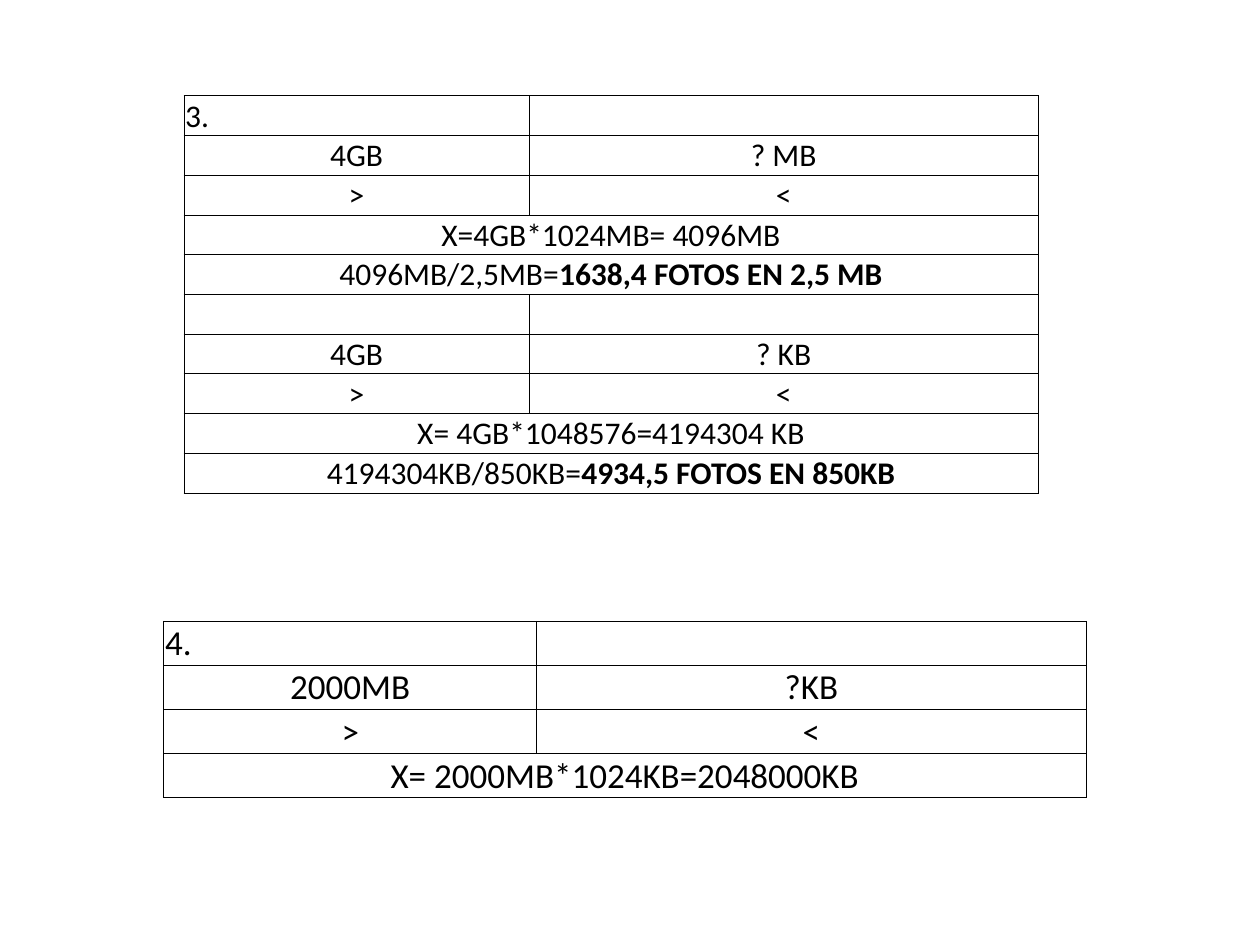
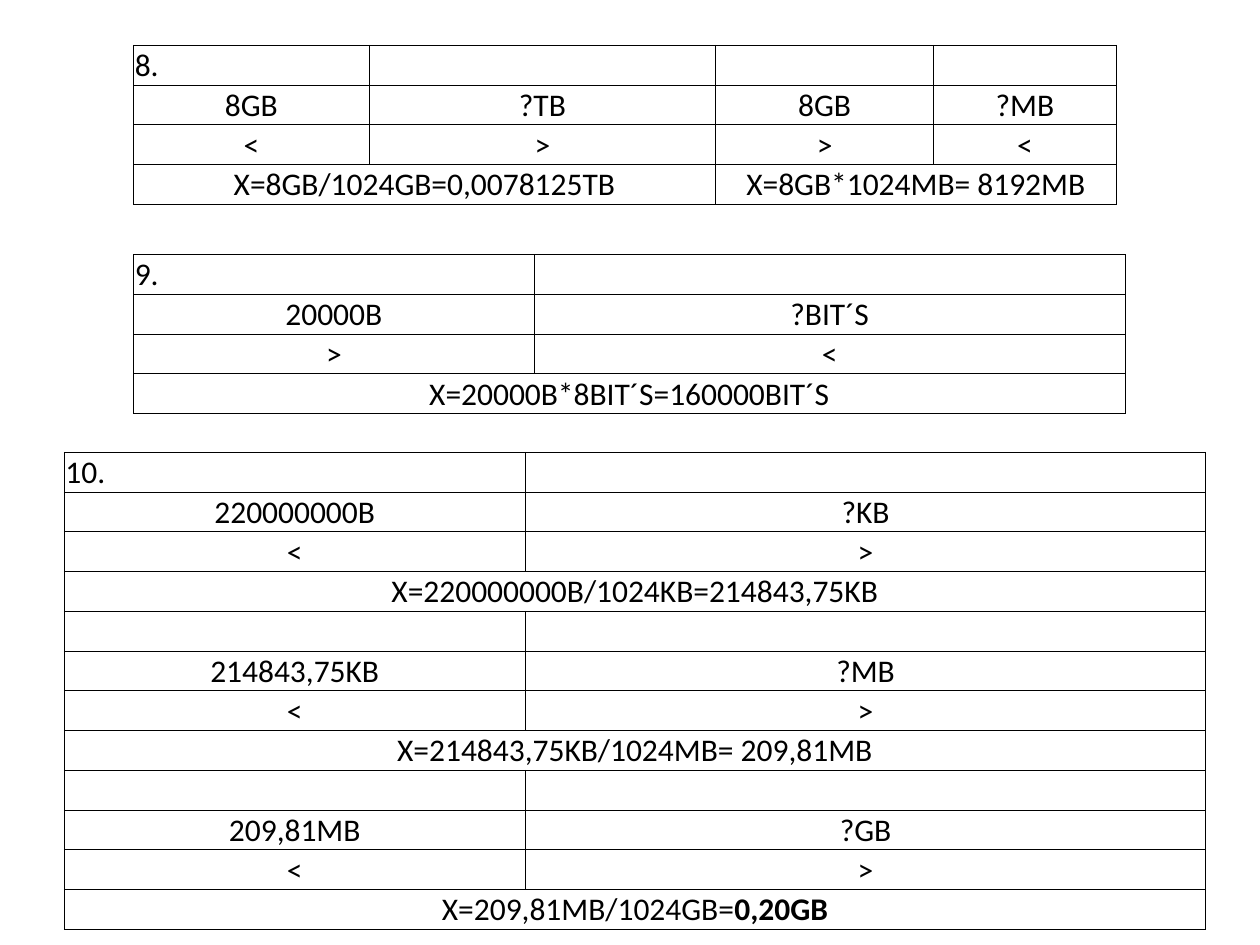
from lxml.etree import SubElement
from pptx import Presentation
from pptx.dml.color import RGBColor
from pptx.enum.text import MSO_ANCHOR, PP_ALIGN
from pptx.oxml.ns import qn
from pptx.util import Inches, Pt

FONT = "Calibri"
INK = "000000"
BORDER_WIDTH = Pt(0.5)
INSET = Inches(0.01)
ROW_HEIGHTS = {18: 0.31, 20: 0.34}

PHOTOS = [
    ["3.", ""],
    ["4GB", "? MB"],
    [">", "<"],
    ["X=4GB*1024MB= 4096MB"],
    [("4096MB/2,5MB=", "1638,4 FOTOS EN 2,5 MB")],
    ["", ""],
    ["4GB", "? KB"],
    [">", "<"],
    ["X= 4GB*1048576=4194304 KB"],
    [("4194304KB/850KB=", "4934,5 FOTOS EN 850KB")],
]
MEGABYTES = [
    ["4.", ""],
    ["2000MB", "?KB"],
    [">", "<"],
    ["X= 2000MB*1024KB=2048000KB"],
]
GIGABYTES = [
    ["8.", "", "", ""],
    ["8GB", "?TB", "8GB", "?MB"],
    ["<", ">", ">", "<"],
    ["X=8GB/1024GB=0,0078125TB", "X=8GB*1024MB= 8192MB"],
]
BITS = [
    ["9.", ""],
    ["20000B", "?BIT´S"],
    [">", "<"],
    ["X=20000B*8BIT´S=160000BIT´S"],
]
BYTES = [
    ["10.", ""],
    ["220000000B", "?KB"],
    ["<", ">"],
    ["X=220000000B/1024KB=214843,75KB"],
    ["", ""],
    ["214843,75KB", "?MB"],
    ["<", ">"],
    ["X=214843,75KB/1024MB= 209,81MB"],
    ["", ""],
    ["209,81MB", "?GB"],
    ["<", ">"],
    [("X=209,81MB/1024GB=", "0,20GB")],
]


def color(hex_code):
    return RGBColor.from_string(hex_code)


def add_borders(cell):
    properties = cell._tc.get_or_add_tcPr()
    for position, side in enumerate(("lnL", "lnR", "lnT", "lnB")):
        border = SubElement(properties, qn(f"a:{side}"), w=str(BORDER_WIDTH))
        line_fill = SubElement(border, qn("a:solidFill"))
        SubElement(line_fill, qn("a:srgbClr"), val=INK)
        properties.insert(position, border)


def style_cell(cell):
    cell.margin_left = cell.margin_right = cell.margin_top = INSET
    cell.margin_bottom = 0
    cell.vertical_anchor = MSO_ANCHOR.BOTTOM
    cell.fill.background()
    add_borders(cell)


def write_cell(cell, content, size, alignment):
    formula, result = content if isinstance(content, tuple) else (content, "")
    paragraph = cell.text_frame.paragraphs[0]
    paragraph.text = formula
    paragraph.alignment = alignment
    if result:
        answer = paragraph.add_run()
        answer.text = result
        answer.font.bold = True
    for run in paragraph.runs:
        run.font.name = FONT
        run.font.size = Pt(size)
        run.font.color.rgb = color(INK)


def add_conversion(slide, left, top, widths, rows, size=18):
    frame = slide.shapes.add_table(
        len(rows), len(widths), Inches(left), Inches(top),
        Inches(sum(widths)), Inches(ROW_HEIGHTS[size] * len(rows)))
    table = frame.table
    table.first_row = table.horz_banding = False
    for column, width in zip(table.columns, widths):
        column.width = Inches(width)
    for cell in table.iter_cells():
        style_cell(cell)
    for row_index, entries in enumerate(rows):
        span = len(widths) // len(entries)
        alignment = PP_ALIGN.CENTER if row_index else PP_ALIGN.LEFT
        for entry_index, content in enumerate(entries):
            first = entry_index * span
            cell = table.cell(row_index, first)
            if span > 1:
                cell.merge(table.cell(row_index, first + span - 1))
            if content:
                write_cell(cell, content, size, alignment)


def build_slide(deck, conversions):
    slide = deck.slides.add_slide(deck.slide_layouts[6])
    for conversion in conversions:
        add_conversion(slide, *conversion)


def main():
    deck = Presentation()
    deck.slide_width = Inches(10)
    deck.slide_height = Inches(7.5)
    build_slide(deck, [
        (1.46, 0.76, [2.74, 4.04], PHOTOS),
        (1.3, 4.93, [2.96, 4.36], MEGABYTES, 20),
    ])
    build_slide(deck, [
        (1.06, 0.36, [1.87, 2.75, 1.73, 1.45], GIGABYTES),
        (1.06, 2.02, [3.18, 4.69], BITS),
        (0.51, 3.59, [3.66, 5.4], BYTES),
    ])
    deck.save("out.pptx")


if __name__ == "__main__":
    main()
